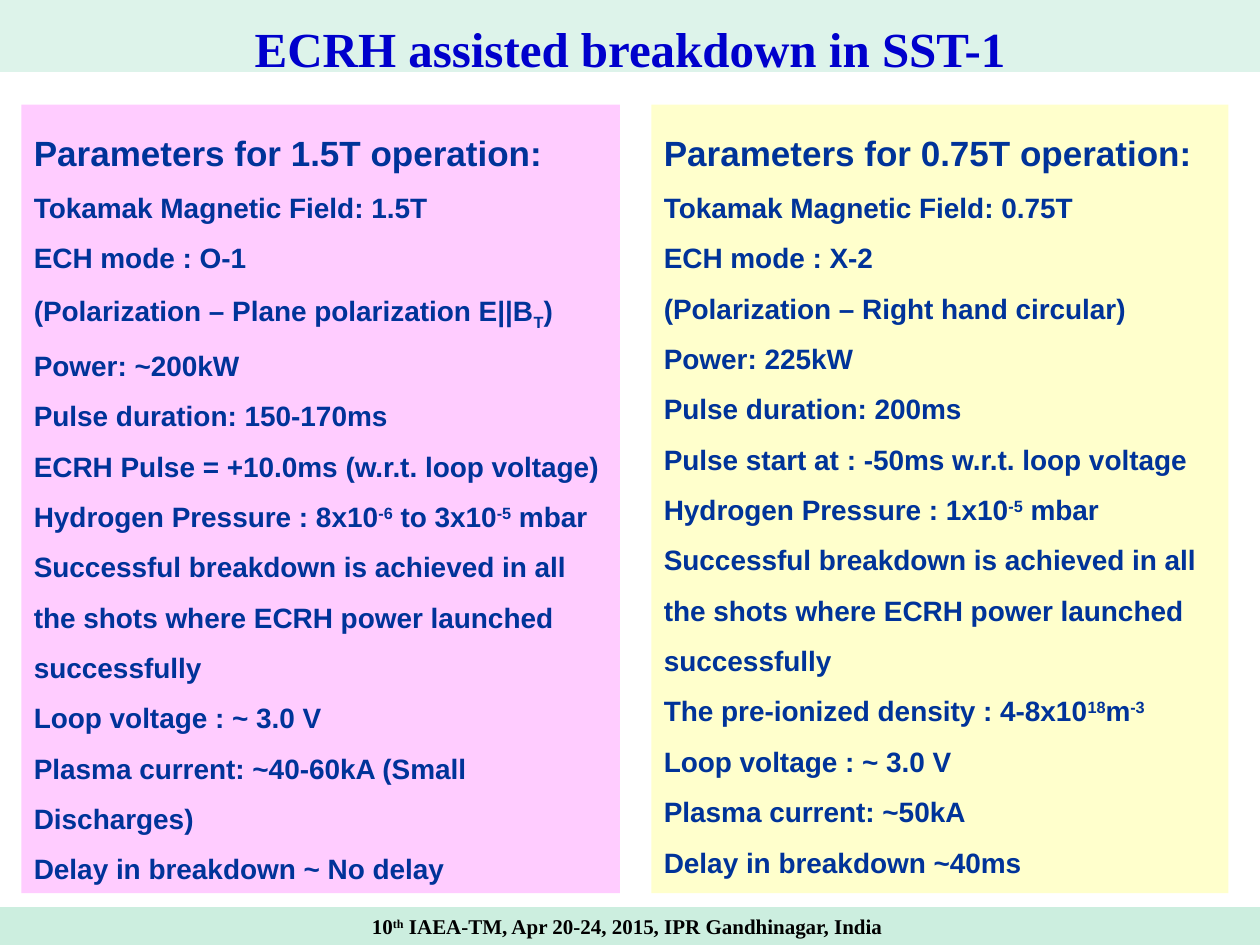
from pptx import Presentation
from pptx.dml.color import RGBColor
from pptx.enum.shapes import MSO_SHAPE
from pptx.enum.text import MSO_ANCHOR, MSO_AUTO_SIZE, PP_ALIGN
from pptx.util import Inches, Pt

RECTANGLE = MSO_SHAPE.RECTANGLE
TOP = MSO_ANCHOR.TOP
FIXED_SIZE = MSO_AUTO_SIZE.NONE
LEFT, CENTER = PP_ALIGN.LEFT, PP_ALIGN.CENTER
TITLE_ONLY = 5

SLIDE_WIDTH, SLIDE_HEIGHT = 10, 7.5
PANEL_TOP, PANEL_HEIGHT = 0.83, 6.26
SUPERSCRIPT, SUBSCRIPT = "30000", "-25000"

# Text between two ^ marks is raised; with a leading _ it is lowered.
BREAKDOWN = ("Successful breakdown is achieved in all the shots "
             "where ECRH power launched successfully")
HIGH_FIELD = [
    "Parameters for 1.5T operation:",
    "Tokamak Magnetic Field: 1.5T",
    "ECH mode : O-1",
    "(Polarization – Plane polarization E||B^_T^)",
    "Power: ~200kW",
    "Pulse duration: 150-170ms",
    "ECRH Pulse = +10.0ms (w.r.t. loop voltage)",
    "Hydrogen Pressure : 8x10^-6^ to 3x10^-5^ mbar",
    BREAKDOWN,
    "Loop voltage : ~ 3.0 V",
    "Plasma current: ~40-60kA (Small Discharges)",
    "Delay in breakdown ~ No delay",
]
LOW_FIELD = [
    "Parameters for 0.75T operation:",
    "Tokamak Magnetic Field: 0.75T",
    "ECH mode : X-2",
    "(Polarization – Right hand circular)",
    "Power: 225kW",
    "Pulse duration: 200ms",
    "Pulse start at : -50ms w.r.t. loop voltage",
    "Hydrogen Pressure : 1x10^-5^ mbar",
    BREAKDOWN,
    "The pre-ionized density : 4-8x10^18^m^-3^",
    "Loop voltage : ~ 3.0 V",
    "Plasma current: ~50kA",
    "Delay in breakdown ~40ms",
]


def color(value):
    return RGBColor.from_string(value)


def format_box(shape, box, fill):
    """Place a filled, unlined shape and prepare its text frame."""
    shape.left, shape.top, shape.width, shape.height = map(Inches, box)
    shape.fill.solid()
    shape.fill.fore_color.rgb = color(fill)
    shape.line.fill.background()
    frame = shape.text_frame
    frame.word_wrap = True
    frame.auto_size = FIXED_SIZE
    frame.vertical_anchor = TOP
    return frame


def add_box(slide, box, fill):
    shape = slide.shapes.add_shape(RECTANGLE, *map(Inches, box))
    shape.shadow.inherit = False
    return format_box(shape, box, fill)


def write_paragraph(paragraph, text, size, font, font_color, align=LEFT):
    paragraph.alignment = align
    for index, piece in enumerate(text.split("^")):
        if not piece:
            continue
        run = paragraph.add_run()
        run.text = piece.removeprefix("_")
        run.font.size = Pt(size)
        run.font.name = font
        run.font.bold = True
        run.font.color.rgb = color(font_color)
        if index % 2:
            baseline = SUBSCRIPT if piece.startswith("_") else SUPERSCRIPT
            run.font._element.set("baseline", baseline)


def add_panel(slide, box, fill, lines):
    frame = add_box(slide, box, fill)
    for index, line in enumerate(lines):
        paragraph = frame.add_paragraph() if index else frame.paragraphs[0]
        paragraph.line_spacing = 1.5
        write_paragraph(paragraph, line, 16 if index else 20, "Arial", "003399")


def add_footer(slide, box):
    frame = add_box(slide, box, "CCEEDF")
    write_paragraph(frame.paragraphs[0],
                    "10^th^ IAEA-TM, Apr 20-24, 2015, IPR Gandhinagar, India ",
                    12, "Times New Roman", "000000", CENTER)


def set_title(slide, box):
    frame = format_box(slide.shapes.title, box, "DDF3EA")
    frame.margin_left = frame.margin_right = Inches(0.02)
    frame.margin_top = frame.margin_bottom = Inches(0.01)
    paragraph = frame.paragraphs[0]
    paragraph.line_spacing = 1.3
    write_paragraph(paragraph, "ECRH assisted breakdown in SST-1",
                    28, "Times New Roman", "0000CC", CENTER)


def main():
    presentation = Presentation()
    presentation.slide_width = Inches(SLIDE_WIDTH)
    presentation.slide_height = Inches(SLIDE_HEIGHT)
    slide = presentation.slides.add_slide(presentation.slide_layouts[TITLE_ONLY])

    # Title band
    set_title(slide, (0, 0, SLIDE_WIDTH, 0.57))

    # Parameter panels, one per half of the slide
    half = SLIDE_WIDTH / 2
    panels = [(4.75, "FFCCFF", HIGH_FIELD), (4.58, "FFFFCC", LOW_FIELD)]
    for column, (width, fill, lines) in enumerate(panels):
        box = (0.17 + column * half, PANEL_TOP, width, PANEL_HEIGHT)
        add_panel(slide, box, fill, lines)

    # Footer band
    add_footer(slide, (0, SLIDE_HEIGHT - 0.3, SLIDE_WIDTH, 0.3))

    presentation.save("out.pptx")


if __name__ == "__main__":
    main()
